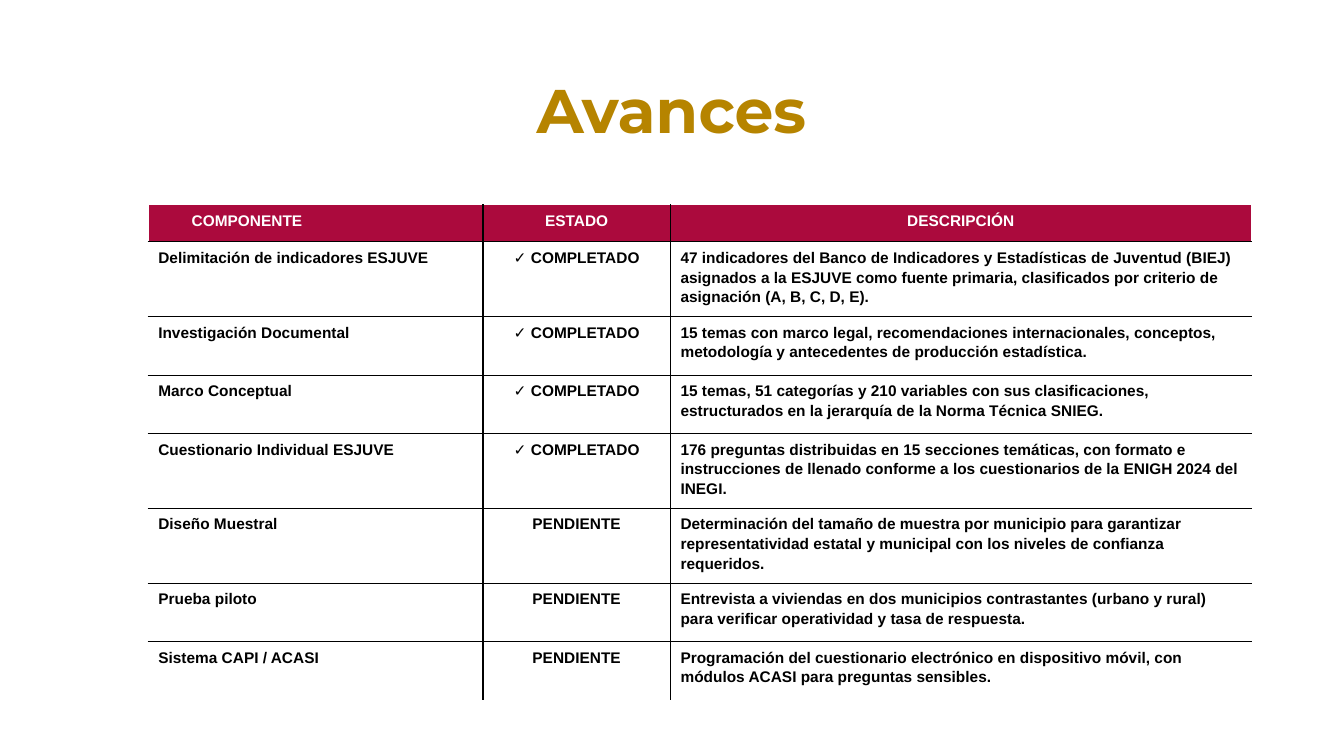
"""Build the progress slide with its status table."""
from dataclasses import dataclass

import pptx
import pptx.dml.color
import pptx.enum.text
import pptx.oxml
import pptx.oxml.ns
import pptx.util
from pptx.util import Inches

ALIGN = pptx.enum.text.PP_ALIGN
ANCHOR = pptx.enum.text.MSO_ANCHOR


@dataclass(frozen=True)
class Theme:
    gold: str = "B68400"
    crimson: str = "AB0A3D"
    white: str = "FFFFFF"
    black: str = "000000"
    title_font: str = "Montserrat"
    body_font: str = "Arial"
    title_size: int = 44
    body_size: int = 11
    border_width: int = 1


THEME = Theme()
DONE = "✓ COMPLETADO"
PENDING = "PENDIENTE"
HEADER = ("\tCOMPONENTE", "ESTADO", "DESCRIPCIÓN")
COMPONENTS = [
    ("Delimitación de indicadores ESJUVE", DONE,
     "47 indicadores del Banco de Indicadores y Estadísticas de Juventud (BIEJ) asignados a la "
     "ESJUVE como fuente primaria, clasificados por criterio de asignación (A, B, C, D, E)."),
    ("Investigación Documental", DONE,
     "15 temas con marco legal, recomendaciones internacionales, conceptos, metodología y "
     "antecedentes de producción estadística."),
    ("Marco Conceptual", DONE,
     "15 temas, 51 categorías y 210 variables con sus clasificaciones, estructurados en la "
     "jerarquía de la Norma Técnica SNIEG."),
    ("Cuestionario Individual ESJUVE", DONE,
     "176 preguntas distribuidas en 15 secciones temáticas, con formato e instrucciones de "
     "llenado conforme a los cuestionarios de la ENIGH 2024 del INEGI."),
    ("Diseño Muestral", PENDING,
     "Determinación del tamaño de muestra por municipio para garantizar representatividad "
     "estatal y municipal con los niveles de confianza requeridos."),
    ("Prueba piloto", PENDING,
     "Entrevista a viviendas en dos municipios contrastantes (urbano y rural) para verificar "
     "operatividad y tasa de respuesta."),
    ("Sistema CAPI / ACASI", PENDING,
     "Programación del cuestionario electrónico en dispositivo móvil, con módulos ACASI para "
     "preguntas sensibles."),
]
COLUMN_WIDTHS = (3.32, 1.86, 5.76)
HEADER_HEIGHT, ROW_HEIGHT = 0.37, 0.58


def apply(target, values):
    for name, value in values.items():
        setattr(target, name, value)


def write(para, text, font, size, color, layout):
    apply(para, layout)
    span = para.add_run()
    span.text = text
    apply(span.font, {"name": font, "size": pptx.util.Pt(size), "bold": True})
    span.font.color.rgb = pptx.dml.color.RGBColor.from_string(color)


def add_center_tab(para, position):
    tabs = pptx.oxml.parse_xml(
        f'<a:tabLst {pptx.oxml.ns.nsdecls("a")}><a:tab pos="{position}" algn="ctr"/></a:tabLst>')
    para._p.get_or_add_pPr().append(tabs)


def set_borders(cell, colors):
    properties = cell._tc.get_or_add_tcPr()
    width = pptx.util.Pt(THEME.border_width)
    for index, (side, color) in enumerate(colors.items()):
        properties.insert(index, pptx.oxml.parse_xml(
            f'<a:ln{side} {pptx.oxml.ns.nsdecls("a")} w="{width}"><a:solidFill>'
            f'<a:srgbClr val="{color}"/></a:solidFill></a:ln{side}>'))


def add_title(page, text):
    box = page.shapes.add_textbox(Inches(0.91), Inches(0.4), Inches(11.5), Inches(1.45))
    apply(box.text_frame, {"word_wrap": True, "vertical_anchor": ANCHOR.MIDDLE})
    write(box.text_frame.paragraphs[0], text, THEME.title_font, THEME.title_size, THEME.gold,
          {"alignment": ALIGN.CENTER, "line_spacing": 0.9})


def fill_cell(cell, text, is_header, centered):
    apply(cell, {"margin_left": Inches(0.1), "margin_right": Inches(0.1),
                 "margin_top": Inches(0.05), "margin_bottom": Inches(0.06),
                 "vertical_anchor": ANCHOR.TOP})
    cell.fill.solid()
    cell.fill.fore_color.rgb = pptx.dml.color.RGBColor.from_string(
        THEME.crimson if is_header else THEME.white)
    para = cell.text_frame.paragraphs[0]
    if text.startswith("\t"):
        add_center_tab(para, Inches(0.88))
    write(para, text, THEME.body_font, THEME.body_size,
          THEME.white if is_header else THEME.black,
          {"alignment": ALIGN.CENTER if centered else ALIGN.LEFT, "line_spacing": 1.15})


def add_status_table(page, rows):
    last_row, last_column = len(rows) - 1, len(COLUMN_WIDTHS) - 1
    height = HEADER_HEIGHT + ROW_HEIGHT * last_row
    table = page.shapes.add_table(len(rows), len(COLUMN_WIDTHS), Inches(1.47), Inches(2.03),
                                  Inches(sum(COLUMN_WIDTHS)), Inches(height)).table
    apply(table, {"first_row": False, "horz_banding": False})
    for column, width in zip(table.columns, COLUMN_WIDTHS):
        column.width = Inches(width)
    for r, texts in enumerate(rows):
        is_header = r == 0
        table.rows[r].height = Inches(HEADER_HEIGHT if is_header else ROW_HEIGHT)
        for c, text in enumerate(texts):
            cell = table.cell(r, c)
            fill_cell(cell, text, is_header, c == 1 or (is_header and c == last_column))
            outer = {"L": c == 0, "R": c == last_column, "T": is_header, "B": r == last_row}
            set_borders(cell, {side: THEME.white if edge else THEME.black
                               for side, edge in outer.items()})


def main():
    deck = pptx.Presentation()
    apply(deck, {"slide_width": Inches(13.33), "slide_height": Inches(7.5)})
    page = deck.slides.add_slide(deck.slide_layouts[6])
    add_title(page, "Avances")
    add_status_table(page, [HEADER, *COMPONENTS])
    deck.save("out.pptx")


if __name__ == "__main__":
    main()
